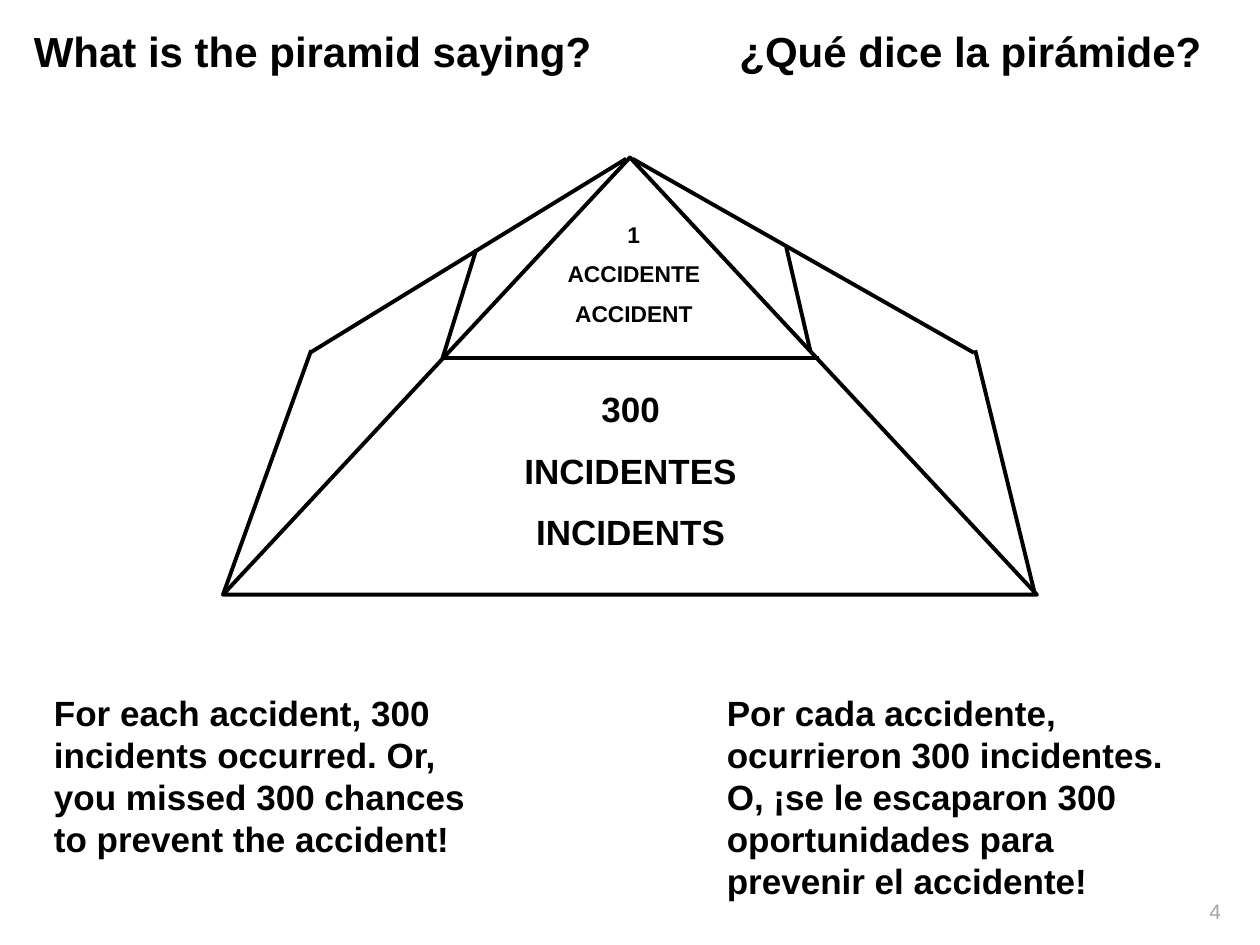
from typing import NamedTuple

from lxml.etree import SubElement
from pptx import Presentation
from pptx.dml.color import RGBColor
from pptx.enum.shapes import MSO_CONNECTOR, MSO_SHAPE
from pptx.enum.text import MSO_AUTO_SIZE, PP_ALIGN
from pptx.oxml.ns import qn
from pptx.util import Emu, Pt

PX = 9144  # EMU per px, 100 px to the inch
BLACK = RGBColor(0x00, 0x00, 0x00)
GREY = RGBColor(0xA6, 0xA6, 0xA6)
FONT = "Arial"
STROKE = Pt(2.25)


class Text(NamedTuple):
    left: int
    top: int
    width: int
    height: int
    size: int
    lines: tuple[str, ...]
    align: PP_ALIGN = PP_ALIGN.LEFT
    gap: int = 0
    bold: bool = True
    color: RGBColor = BLACK


class Edge(NamedTuple):
    x1: int
    y1: int
    x2: int
    y2: int


NOTES = (
    Text(950, 708, 41, 30, 12, ("4",), bold=False, color=GREY),
    Text(17, 15, 508, 50, 24, ("What is the piramid saying?",)),
    Text(577, 15, 442, 50, 24, ("¿Qué dice la pirámide?",)),
    Text(33, 544, 360, 145, 20, (
        "For each accident, 300 incidents occurred. "
        "Or, you missed 300 chances to prevent the accident!",)),
    Text(567, 544, 385, 178, 20, (
        "Por cada accidente, ocurrieron 300 incidentes. "
        "O, ¡se le escaparon 300 oportunidades para prevenir el accidente!",)),
)
TIERS = (
    Text(291, 303, 419, 145, 20, ("300", "INCIDENTES", "INCIDENTS"),
         PP_ALIGN.CENTER, 11),
    Text(395, 170, 216, 98, 13, ("1", "ACCIDENTE", "ACCIDENT"),
         PP_ALIGN.CENTER, 7),
)
EDGES = (
    Edge(352, 284, 650, 284),  # tier divider
    Edge(177, 472, 247, 278),  # left face
    Edge(246, 280, 497, 126),
    Edge(351, 285, 378, 198),
    Edge(502, 126, 773, 280),  # right face
    Edge(821, 470, 774, 278),
    Edge(643, 278, 624, 196),
)


def px(*nums: int) -> list[Emu]:
    return [Emu(n * PX) for n in nums]


def add_text(shapes, item: Text) -> None:
    box = shapes.add_textbox(*px(*item[:4]))
    frame = box.text_frame
    frame.word_wrap = True
    frame.auto_size = MSO_AUTO_SIZE.SHAPE_TO_FIT_TEXT
    for i, line in enumerate(item.lines):
        para = frame.paragraphs[0] if i == 0 else frame.add_paragraph()
        para.text = line
        para.alignment = item.align
        if i and item.gap:
            para.space_before = Pt(item.gap)
        font = para.font
        font.name = FONT
        font.size = Pt(item.size)
        font.bold = item.bold
        font.color.rgb = item.color


def add_edge(shapes, edge: Edge) -> None:
    line = shapes.add_connector(MSO_CONNECTOR.STRAIGHT, *px(*edge))
    line.line.color.rgb = BLACK
    line.line.width = STROKE
    SubElement(line._element.spPr, qn("a:effectLst"))


def add_front(shapes) -> None:
    front = shapes.add_shape(
        MSO_SHAPE.ISOSCELES_TRIANGLE, *px(177, 125, 646, 347))
    front.shadow.inherit = False
    front.fill.background()
    front.line.color.rgb = BLACK
    front.line.width = STROKE


def main() -> None:
    deck = Presentation()
    deck.slide_width, deck.slide_height = px(1000, 750)
    slide = deck.slides.add_slide(deck.slide_layouts[6])
    for note in NOTES:
        add_text(slide.shapes, note)
    group = slide.shapes.add_group_shape().shapes
    add_front(group)
    for edge in EDGES:
        add_edge(group, edge)
    for tier in TIERS:
        add_text(group, tier)
    deck.save("out.pptx")


if __name__ == "__main__":
    main()
